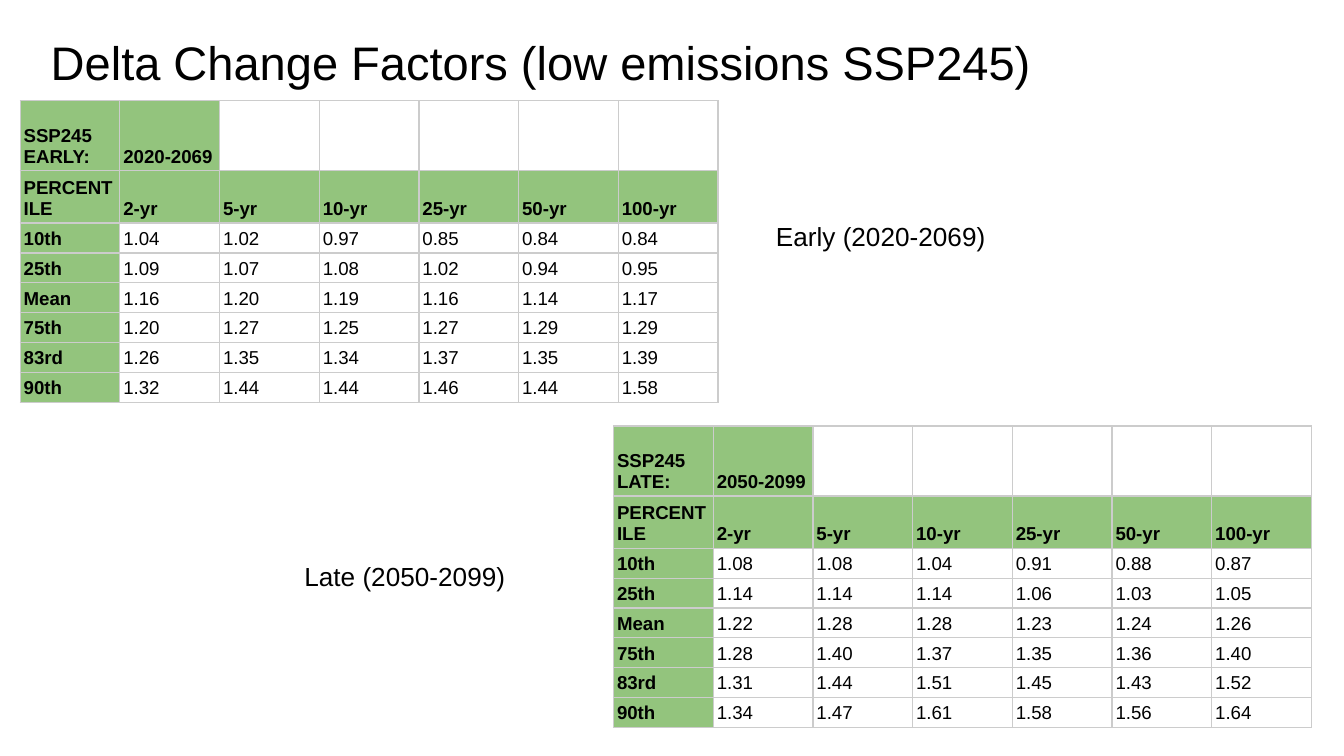
from dataclasses import dataclass

from lxml import etree
from pptx import Presentation
from pptx.dml.color import RGBColor
from pptx.enum.text import MSO_ANCHOR, MSO_AUTO_SIZE, PP_ALIGN
from pptx.oxml.ns import qn
from pptx.util import Inches, Pt

TOP, BOTTOM = MSO_ANCHOR.TOP, MSO_ANCHOR.BOTTOM
LEFT, JUSTIFY = PP_ALIGN.LEFT, PP_ALIGN.JUSTIFY
NO_AUTOFIT = MSO_AUTO_SIZE.NONE

WIDTH = Inches(10)
HEIGHT = WIDTH * 9 // 16
TITLE_ONLY = 5


@dataclass(frozen=True)
class Theme:
    font: str = "Arial"
    ink: str = "000000"
    header: str = "93C47D"
    grid: str = "CCCCCC"
    grid_width: float = 0.75
    title_size: float = 25.2
    title_margin: float = 7.2
    label_size: float = 14
    cell_size: float = 10
    cell_margin: float = 1.9


THEME = Theme()

# Table measures in percent of the slide's width or height
COLUMN_WIDTH = 7.42
TOP_ROW, HEADING_ROW, VALUE_ROW = 9.26, 6.92, 3.95

RETURN_PERIODS = ["2-yr", "5-yr", "10-yr", "25-yr", "50-yr", "100-yr"]
PERCENTILES = ["10th", "25th", "Mean", "75th", "83rd", "90th"]
EARLY_FACTORS = [
    [1.04, 1.02, 0.97, 0.85, 0.84, 0.84],
    [1.09, 1.07, 1.08, 1.02, 0.94, 0.95],
    [1.16, 1.20, 1.19, 1.16, 1.14, 1.17],
    [1.20, 1.27, 1.25, 1.27, 1.29, 1.29],
    [1.26, 1.35, 1.34, 1.37, 1.35, 1.39],
    [1.32, 1.44, 1.44, 1.46, 1.44, 1.58],
]
LATE_FACTORS = [
    [1.08, 1.08, 1.04, 0.91, 0.88, 0.87],
    [1.14, 1.14, 1.14, 1.06, 1.03, 1.05],
    [1.22, 1.28, 1.28, 1.23, 1.24, 1.26],
    [1.28, 1.40, 1.37, 1.35, 1.36, 1.40],
    [1.31, 1.44, 1.51, 1.45, 1.43, 1.52],
    [1.34, 1.47, 1.61, 1.58, 1.56, 1.64],
]


def across(percent):
    return round(WIDTH * percent / 100)


def down(percent):
    return round(HEIGHT * percent / 100)


def set_all(target, values):
    for name, value in values.items():
        setattr(target, name, value)


def margins(points):
    sides = ("left", "right", "top", "bottom")
    return {f"margin_{side}": Pt(points) for side in sides}


def write(frame, text, size, bold=False, align=LEFT):
    para = frame.paragraphs[0]
    para.alignment = align
    span = para.add_run()
    span.text = text
    set_all(span.font, {"name": THEME.font, "size": Pt(size), "bold": bold})
    span.font.color.rgb = RGBColor.from_string(THEME.ink)


def add_title(page, text):
    title = page.shapes.title
    set_all(title, {"left": across(2.77), "top": down(2.67),
                    "width": across(93.2), "height": down(9.78)})
    set_all(title.text_frame, {"auto_size": NO_AUTOFIT, "word_wrap": True,
                               "vertical_anchor": TOP,
                               **margins(THEME.title_margin)})
    write(title.text_frame, text, THEME.title_size)


def add_label(page, text, left, top):
    box = page.shapes.add_textbox(across(left), down(top), across(20.7), down(6.04))
    box.text_frame.word_wrap = True
    write(box.text_frame, text, THEME.label_size)


def add_borders(cell):
    """Draw the four cell edges; they must come before the fill in the XML."""
    properties = cell._tc.get_or_add_tcPr()
    for position, edge in enumerate(("a:lnL", "a:lnR", "a:lnT", "a:lnB")):
        line = etree.Element(qn(edge), w=str(Pt(THEME.grid_width)))
        fill = etree.SubElement(line, qn("a:solidFill"))
        etree.SubElement(fill, qn("a:srgbClr"), val=THEME.grid)
        properties.insert(position, line)


def format_cell(cell, text, is_header):
    if is_header:
        cell.fill.solid()
        cell.fill.fore_color.rgb = RGBColor.from_string(THEME.header)
    else:
        cell.fill.background()
    add_borders(cell)
    if text:
        set_all(cell, {"vertical_anchor": BOTTOM, **margins(THEME.cell_margin)})
        write(cell.text_frame, text, THEME.cell_size, is_header, JUSTIFY)


def add_factor_table(page, name, years, factors, left, top):
    blanks = [""] * (len(RETURN_PERIODS) - 1)
    rows = [[name, years, *blanks], ["PERCENTILE", *RETURN_PERIODS]]
    for percentile, values in zip(PERCENTILES, factors):
        rows.append([percentile, *(f"{value:.2f}" for value in values)])
    heights = [TOP_ROW, HEADING_ROW] + [VALUE_ROW] * len(factors)
    columns = len(rows[0])

    table = page.shapes.add_table(
        len(rows), columns, across(left), down(top),
        across(COLUMN_WIDTH * columns), down(sum(heights))).table
    set_all(table, {"first_row": False, "horz_banding": False})
    for column in table.columns:
        column.width = across(COLUMN_WIDTH)
    for r, (texts, height) in enumerate(zip(rows, heights)):
        table.rows[r].height = down(height)
        for c, text in enumerate(texts):
            is_header = bool(text) and (r < 2 or c == 0)
            format_cell(table.cell(r, c), text, is_header)


def main():
    deck = Presentation()
    set_all(deck, {"slide_width": WIDTH, "slide_height": HEIGHT})
    page = deck.slides.add_slide(deck.slide_layouts[TITLE_ONLY])
    add_title(page, "Delta Change Factors (low emissions SSP245)")
    add_label(page, "Early (2020-2069)", 56.75, 28.27)
    add_label(page, "Late (2050-2099)", 21.67, 73.24)
    add_factor_table(page, "SSP245 EARLY:", "2020-2069", EARLY_FACTORS, 1.5, 13.33)
    add_factor_table(page, "SSP245 LATE:", "2050-2099", LATE_FACTORS, 45.65, 56.36)
    deck.save("out.pptx")


if __name__ == "__main__":
    main()
